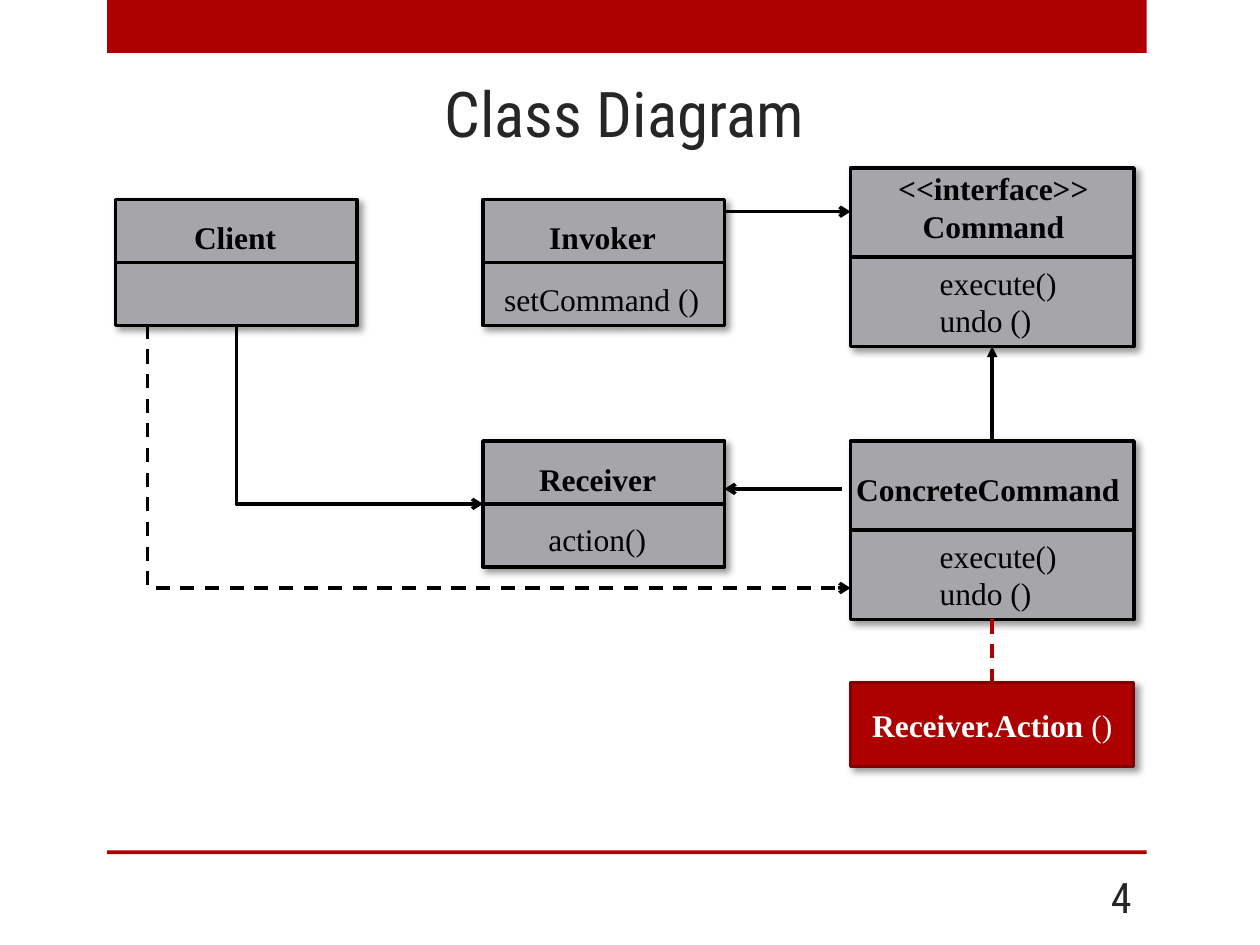
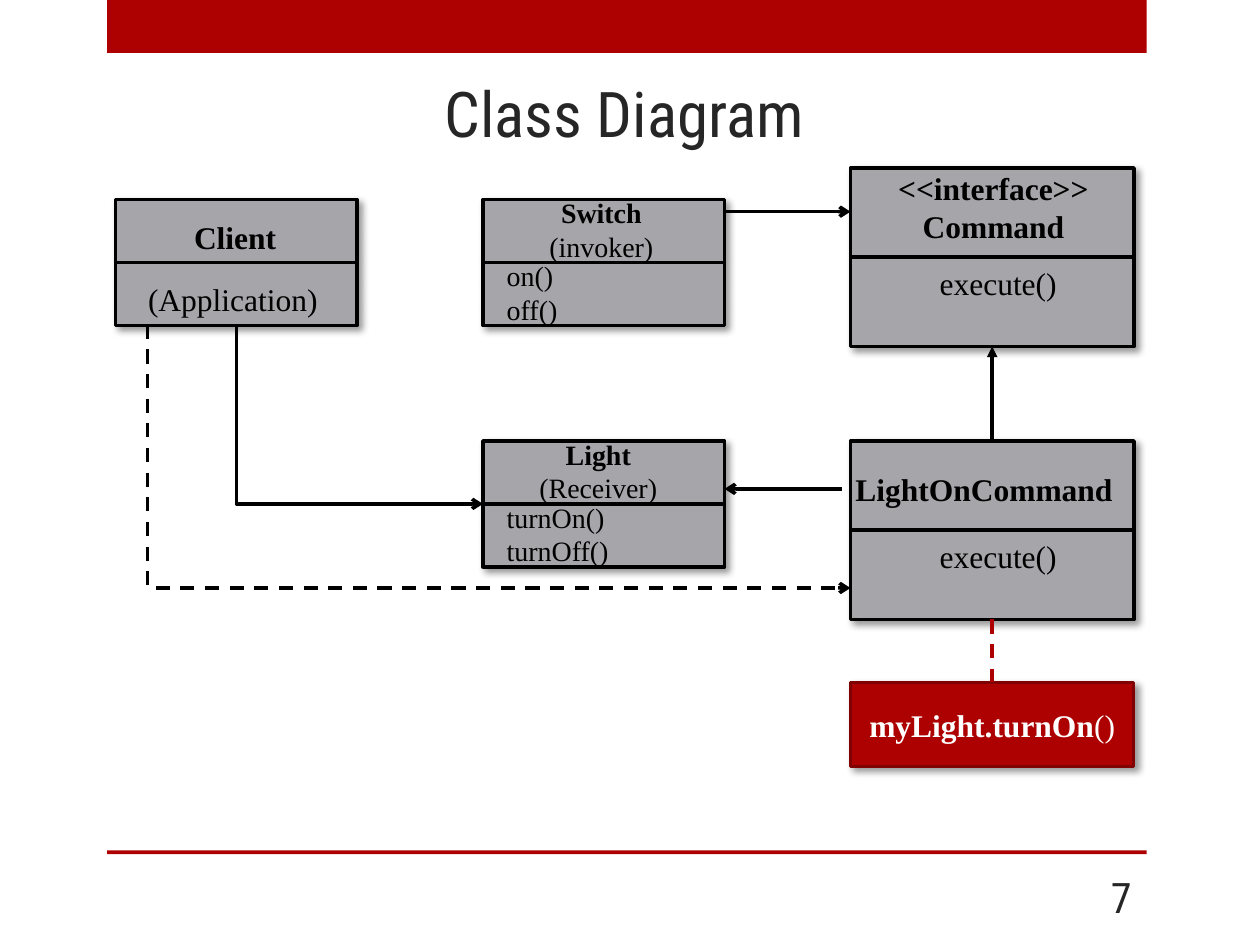
"""Build two class-diagram slides of the Command pattern on a grid of twelfths of an inch."""
from lxml.etree import SubElement
from pptx import Presentation
from pptx.dml.color import RGBColor
from pptx.enum.dml import MSO_LINE
from pptx.enum.shapes import MSO_CONNECTOR, MSO_SHAPE
from pptx.enum.text import MSO_ANCHOR, PP_ALIGN
from pptx.oxml.ns import qn
from pptx.util import Inches, Pt

RED = RGBColor(0xAD, 0x01, 0x01)
DARK_RED = RGBColor(0x80, 0x01, 0x01)
GRAY = RGBColor(0xA5, 0xA5, 0xAA)
INK = RGBColor(0x26, 0x26, 0x26)
BLACK = RGBColor(0, 0, 0)
WHITE = RGBColor(0xFF, 0xFF, 0xFF)
TITLE_FONT, DIAGRAM_FONT = "Roboto Condensed", "Times New Roman"
TOP, LEFT, BOTTOM, RIGHT = range(4)

# Class boxes: left, top, width, height in grid units
CLASS_BOXES = {
    "client": (11, 19, 23, 12),
    "invoker": (46, 19, 23, 12),
    "receiver": (46, 42, 23, 12),
    "concrete": (81, 42, 27, 17),
    "command": (81, 16, 27, 17),
}
CALL_BOX = (81, 65, 27, 8)

# Labels: class, inches right of and below its corner, width, size, lines of (text, bold)
INTERFACE = ("command", 0.27, -0.04, 1.73, 18, [("<<interface>>", True), ("Command", True)])
CLIENT = ("client", 0.52, 0.1, 0.86, 18, [("Client", True)])
SLIDES = [
    {
        "title": "Class Diagram",
        "number": "4",
        "headers": [
            CLIENT,
            INTERFACE,
            ("invoker", 0.42, 0.1, 1.06, 18, [("Invoker", True)]),
            ("receiver", 0.34, 0.1, 1.14, 18, [("Receiver", True)]),
            ("concrete", -0.07, 0.18, 2.32, 18, [("ConcreteCommand", True)]),
        ],
        "members": [
            ("invoker", 0.07, 0.59, 1.77, 18, [("setCommand ()", False)]),
            ("receiver", 0.42, 0.58, 0.99, 18, [("action()", False)]),
            ("concrete", 0.61, 0.71, 1.14, 18, [("execute()", False), ("undo ()", False)]),
            ("command", 0.61, 0.71, 1.14, 18, [("execute()", False), ("undo ()", False)]),
        ],
        "call": [("Receiver.Action", True), (" ()", False)],
    },
    {
        "title": "Class Diagram",
        "number": "7",
        "headers": [
            CLIENT,
            INTERFACE,
            ("invoker", 0.42, -0.08, 1.04, 16, [("Switch", True), ("(invoker)", False)]),
            ("receiver", 0.34, -0.08, 1.15, 16, [("Light", True), ("(Receiver)", False)]),
            ("concrete", -0.07, 0.18, 2.26, 18, [("LightOnCommand", True)]),
        ],
        "members": [
            ("client", 0.16, 0.59, 1.56, 18, [("(Application)", False)]),
            ("invoker", 0.09, 0.42, 0.61, 16, [("on()", False), ("off()", False)]),
            ("receiver", 0.09, 0.42, 1.02, 16, [("turnOn()", False), ("turnOff()", False)]),
            ("concrete", 0.61, 0.71, 1.14, 18, [("execute()", False)]),
            ("command", 0.61, 0.71, 1.14, 18, [("execute()", False)]),
        ],
        "call": [("myLight.turnOn", True), ("()", False)],
    },
]


def grid(*units):
    return [Inches(unit / 12) for unit in units]


def add_run(paragraph, text, font_name, size, color, bold=False):
    run = paragraph.add_run()
    run.text = text
    run.font.name = font_name
    run.font.size = Pt(size)
    run.font.bold = bold
    run.font.color.rgb = color


def add_rectangle(slide, place, fill):
    shape = slide.shapes.add_shape(MSO_SHAPE.RECTANGLE, *place)
    shape.shadow.inherit = False
    shape.fill.solid()
    shape.fill.fore_color.rgb = fill
    shape.line.fill.background()
    return shape


def add_box(slide, units, fill, outline, line_width):
    shape = add_rectangle(slide, grid(*units), fill)
    shape.line.color.rgb = outline
    shape.line.width = Pt(line_width)
    effects = shape._element.spPr.find(qn("a:effectLst"))
    shadow = SubElement(effects, qn("a:outerShdw"), blurRad=str(Pt(4)), dist=str(Pt(3)),
                        dir="2700000", rotWithShape="0")
    color = SubElement(shadow, qn("a:srgbClr"), val=str(BLACK))
    SubElement(color, qn("a:alpha"), val="40000")
    return shape


def add_line(slide, start, end, color=BLACK, arrow=None, dashed=False, elbow=False):
    kind = MSO_CONNECTOR.ELBOW if elbow else MSO_CONNECTOR.STRAIGHT
    connector = slide.shapes.add_connector(kind, *grid(*start, *end))
    connector.line.color.rgb = color
    connector.line.width = Pt(2)
    if dashed:
        connector.line.dash_style = MSO_LINE.DASH
    properties = connector._element.spPr
    if arrow:
        SubElement(properties.find(qn("a:ln")), qn("a:tailEnd"), type=arrow)
    if elbow:
        adjustments = properties.find(qn("a:prstGeom")).get_or_add_avLst()
        SubElement(adjustments, qn("a:gd"), name="adj1", fmla="val 100")
    SubElement(properties, qn("a:effectLst"))
    return connector


def join(connector, start, start_side, end, end_side):
    connector.begin_connect(start, start_side)
    connector.end_connect(end, end_side)


def add_label(slide, label, alignment):
    name, right, down, width, size, lines = label
    left, top = grid(*CLASS_BOXES[name][:2])
    height = Inches(0.1) + Pt(1.22 * size * len(lines))
    box = slide.shapes.add_textbox(left + Inches(right), top + Inches(down), Inches(width), height)
    frame = box.text_frame
    frame.word_wrap = False
    for index, (text, bold) in enumerate(lines):
        paragraph = frame.add_paragraph() if index else frame.paragraphs[0]
        paragraph.alignment = alignment
        add_run(paragraph, text, DIAGRAM_FONT, size, BLACK, bold)


def add_frame(slide, title, number):
    for top, height in ((0, 0.42), (6.75, 0.03)):
        add_rectangle(slide, map(Inches, (0.85, top, 8.25, height)), RED)
    heading = slide.shapes.title
    heading.left, heading.top, heading.width, heading.height = map(Inches, (0.83, 0.53, 8.25, 0.72))
    number_box = slide.shapes.add_textbox(*map(Inches, (8.25, 6.92, 0.83, 0.4)))
    for shape, text, size, alignment in (
        (heading, title, 36, PP_ALIGN.CENTER),
        (number_box, number, 24, PP_ALIGN.RIGHT),
    ):
        frame = shape.text_frame
        frame.word_wrap = True
        frame.vertical_anchor = MSO_ANCHOR.MIDDLE
        frame.paragraphs[0].alignment = alignment
        add_run(frame.paragraphs[0], text, TITLE_FONT, size, INK)


def add_diagram(slide, content):
    boxes = {}
    for name, units in CLASS_BOXES.items():
        left, top, width, height = units
        boxes[name] = add_box(slide, units, GRAY, BLACK, 2)
        middle = top + height / 2
        add_line(slide, (left, middle), (left + width, middle))
    for label in content["headers"]:
        add_label(slide, label, PP_ALIGN.CENTER)
    for label in content["members"]:
        add_label(slide, label, PP_ALIGN.LEFT)

    add_line(slide, (22.5, 31), (46, 48), arrow="arrow", elbow=True)
    add_line(slide, (14, 31), (81, 56), arrow="arrow", dashed=True, elbow=True)
    add_line(slide, (69, 20.16), (81, 20.16), arrow="arrow")
    add_line(slide, (80.16, 46.56), (69, 46.56), arrow="arrow")
    inherits = add_line(slide, (94.5, 42), (94.5, 33), arrow="triangle")
    join(inherits, boxes["concrete"], TOP, boxes["command"], BOTTOM)

    call = add_box(slide, CALL_BOX, RED, DARK_RED, 1.75)
    frame = call.text_frame
    frame.vertical_anchor = MSO_ANCHOR.MIDDLE
    frame.paragraphs[0].alignment = PP_ALIGN.CENTER
    for text, bold in content["call"]:
        add_run(frame.paragraphs[0], text, DIAGRAM_FONT, 18, WHITE, bold)
    calls = add_line(slide, (94.5, 59), (94.5, 65), RED, dashed=True)
    join(calls, boxes["concrete"], BOTTOM, call, TOP)


def main():
    presentation = Presentation()
    presentation.slide_width, presentation.slide_height = Inches(10), Inches(7.5)
    for content in SLIDES:
        slide = presentation.slides.add_slide(presentation.slide_layouts.get_by_name("Title Only"))
        add_frame(slide, content["title"], content["number"])
        add_diagram(slide, content)
    presentation.save("out.pptx")


if __name__ == "__main__":
    main()
